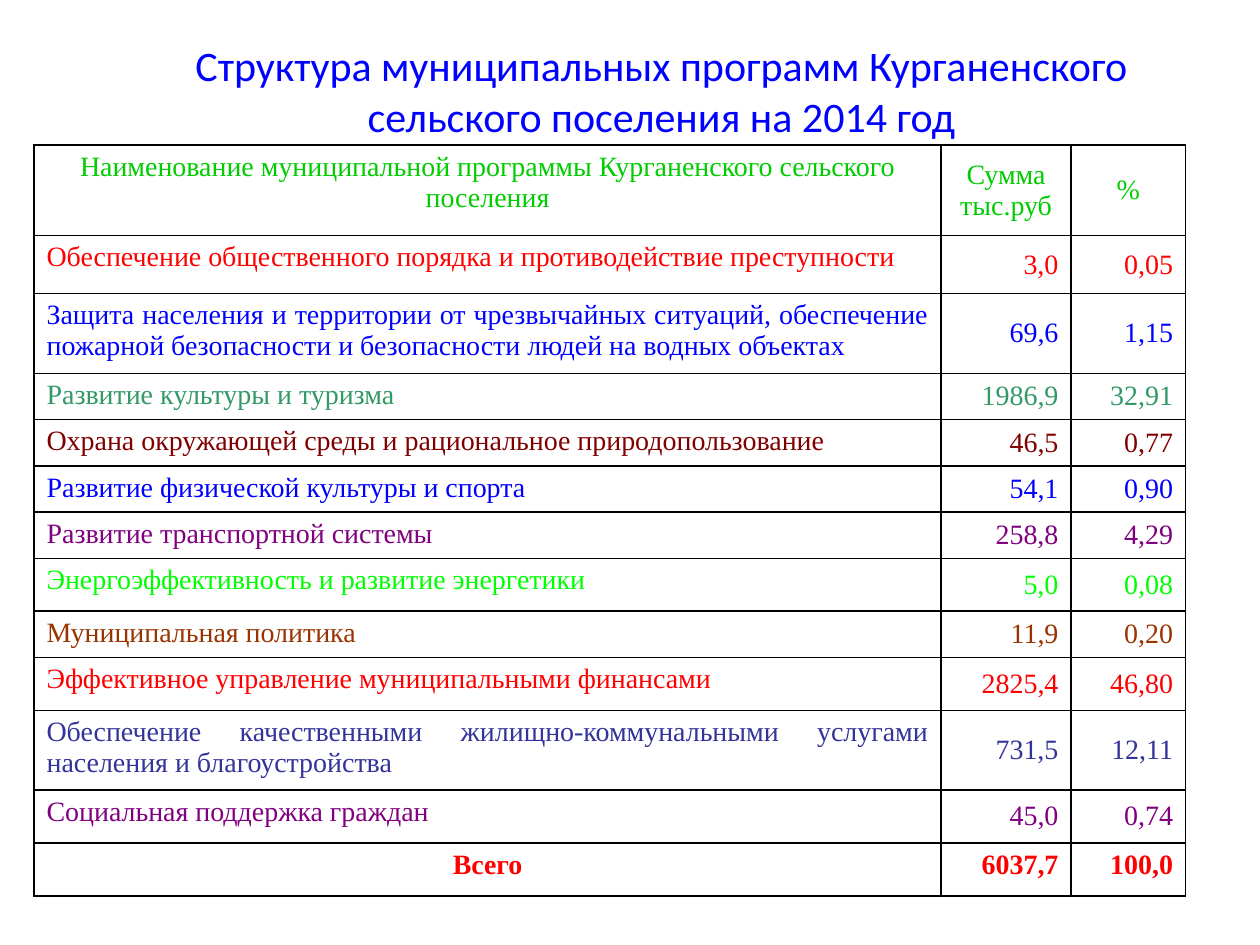
from lxml.etree import SubElement
from pptx import Presentation
from pptx.dml.color import RGBColor
from pptx.enum.text import MSO_ANCHOR, PP_ALIGN
from pptx.oxml.ns import qn
from pptx.util import Inches, Pt

WIDTH, HEIGHT = 10, 7.5
COLORS = {
    "blue": "0000FF", "header": "00CC00", "red": "FF0000", "teal": "339966",
    "maroon": "800000", "purple": "800080", "lime": "00FF00",
    "brown": "993300", "indigo": "333399", "white": "FFFFFF", "black": "000000",
}
COLUMNS = [7.2, 1.03, 0.91]
LINE, ROOMY, DOUBLE, HEADER = 0.34, 0.42, 0.59, 0.72

# Programme, sum, percent, colour, row height
HEADINGS = ("Наименование муниципальной программы Курганенского сельского поселения",
            "Сумма тыс.руб", "%", "header", HEADER)
PROGRAMMES = [
    ("Обеспечение общественного порядка и противодействие преступности",
     "3,0", "0,05", "red", 0.46),
    ("Защита населения и территории от чрезвычайных ситуаций, обеспечение "
     "пожарной безопасности и безопасности людей на водных объектах",
     "69,6", "1,15", "blue", DOUBLE),
    ("Развитие культуры и туризма", "1986,9", "32,91", "teal", LINE),
    ("Охрана окружающей среды и рациональное природопользование",
     "46,5", "0,77", "maroon", LINE),
    ("Развитие физической культуры и спорта", "54,1", "0,90", "blue", LINE),
    ("Развитие транспортной системы", "258,8", "4,29", "purple", LINE),
    ("Энергоэффективность и развитие энергетики", "5,0", "0,08", "lime", ROOMY),
    ("Муниципальная политика", "11,9", "0,20", "brown", LINE),
    ("Эффективное управление муниципальными финансами",
     "2825,4", "46,80", "red", ROOMY),
    ("Обеспечение качественными жилищно-коммунальными услугами населения "
     "и благоустройства", "731,5", "12,11", "indigo", DOUBLE),
    ("Социальная поддержка граждан", "45,0", "0,74", "purple", ROOMY),
]
TOTAL = ("Всего", "6037,7", "100,0", "red", ROOMY)


def rgb(name):
    return RGBColor.from_string(COLORS[name])


def write(tf, text, font, size, color, align, bold=False):
    p = tf.paragraphs[0]
    p.alignment = align
    r = p.add_run()
    r.text = text
    r.font.name, r.font.size, r.font.bold = font, Pt(size), bold
    r.font.color.rgb = rgb(color)


def add_title(slide, text):
    sp = slide.shapes.add_textbox(Inches(0.1 * WIDTH), Inches(0.28),
                                  Inches(0.85 * WIDTH), Inches(0.87))
    tf = sp.text_frame
    tf.word_wrap = True
    tf.vertical_anchor = MSO_ANCHOR.MIDDLE
    write(tf, text, "Calibri", 24, "blue", PP_ALIGN.CENTER)


def add_borders(cell):
    tcPr = cell._tc.get_or_add_tcPr()
    for side in ("lnL", "lnR", "lnT", "lnB"):
        ln = SubElement(tcPr, qn(f"a:{side}"), w=str(Pt(1)))
        fill = SubElement(ln, qn("a:solidFill"))
        SubElement(fill, qn("a:srgbClr"), val=COLORS["black"])


def fill_row(table, i, row, aligns, anchors, bold=False):
    *texts, color, height = row
    table.rows[i].height = Inches(height)
    for cell, text, align, anchor in zip(table.rows[i].cells, texts, aligns, anchors):
        add_borders(cell)
        cell.fill.solid()
        cell.fill.fore_color.rgb = rgb("white")
        cell.vertical_anchor = anchor
        write(cell.text_frame, text, "Times New Roman", 16, color, align, bold)


def add_programme_table(slide):
    count = len(PROGRAMMES) + 2
    height = sum(row[-1] for row in [HEADINGS, *PROGRAMMES, TOTAL])
    table = slide.shapes.add_table(count, len(COLUMNS), Inches(0.27), Inches(1.15),
                                   Inches(sum(COLUMNS)), Inches(height)).table
    table.first_row = table.horz_banding = False
    for column, width in zip(table.columns, COLUMNS):
        column.width = Inches(width)

    center, right = PP_ALIGN.CENTER, PP_ALIGN.RIGHT
    top, middle = MSO_ANCHOR.TOP, MSO_ANCHOR.MIDDLE
    fill_row(table, 0, HEADINGS, [center] * 3, [top, middle, middle])
    for i, row in enumerate(PROGRAMMES, 1):
        fill_row(table, i, row, [PP_ALIGN.JUSTIFY, right, right], [top, middle, middle])
    fill_row(table, count - 1, TOTAL, [center, right, right], [top] * 3, bold=True)


def main():
    prs = Presentation()
    prs.slide_width, prs.slide_height = Inches(WIDTH), Inches(HEIGHT)
    slide = prs.slides.add_slide(prs.slide_layouts[6])
    add_title(slide, "Структура муниципальных программ Курганенского "
                     "сельского поселения на 2014 год")
    add_programme_table(slide)
    prs.save("out.pptx")


if __name__ == "__main__":
    main()
